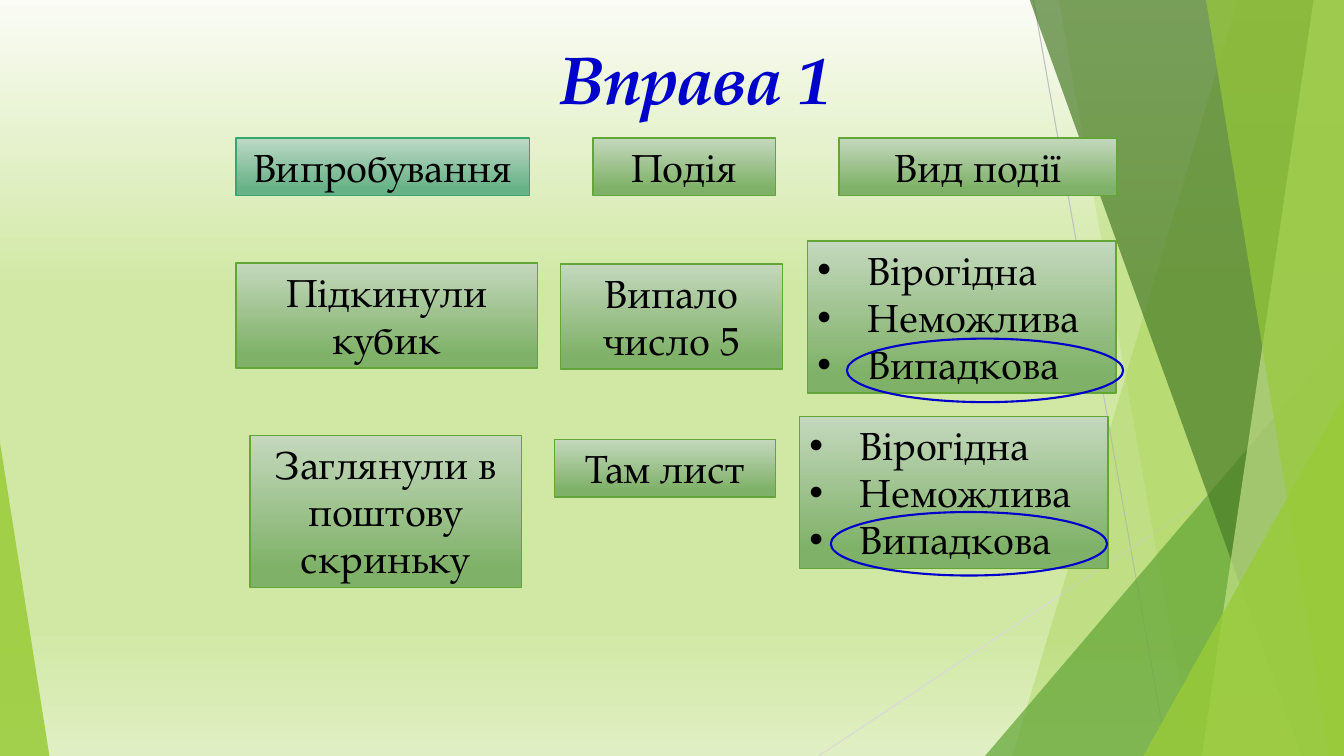
"""Build the "Вправа 1" slide about kinds of random events."""
from dataclasses import dataclass

from lxml import etree
from pptx import Presentation
from pptx import util as u
from pptx.dml import color
from pptx.enum import shapes, text
from pptx.oxml import ns

FONT = "TeX Gyre Pagella"
COLORS = {
    "lime": "99CB38", "leaf": "63A537", "forest": "4A7C29", "pale": "C2E088",
    "teal": "37A76F", "ink": "000000", "accent": "0000CC",
    "silver": "BFBFBF", "mist": "D9D9D9",
}
GRADIENTS = {
    "background": ((0, "FAFCF5"), (38, "D1E8A5"), (83, "D1E8A5"), (100, "E0EFC3")),
    "leaf": ((0, "C4D8BD"), (88, "7FB168")),
    "teal": ((0, "BDD9C7"), (88, "68B287")),
}
WIDTH, HEIGHT, TOP = 13.33, 7.5, -0.01


@dataclass
class Ray:
    start: tuple[float, float]
    end: tuple[float, float]
    tint: str


@dataclass
class Band:
    top_left: float
    bottom_left: float
    tint: str
    alpha: int


@dataclass
class Corner:
    left: float
    top: float
    width: float
    apex: int
    tint: str
    alpha: int


@dataclass
class Card:
    left: float
    top: float
    width: float
    height: float
    lines: tuple[str, ...]
    tint: str = "leaf"


RAYS = (
    Ray((10.25, 0), (11.58, HEIGHT), "silver"),
    Ray((WIDTH, 4.03), (8.12, HEIGHT), "mist"),
)
FACETS = (
    Band(12.28, 10.04, "lime", 30),
    Band(10.5, 11.83, "lime", 20),
    Corner(9.77, 3.33, 3.56, 1, "leaf", 72),
    Band(10.21, 12.91, "forest", 70),
    Band(13.03, 11.92, "pale", 70),
    Band(11.96, 13.18, "lime", 65),
    Corner(11.34, 3.93, 1.99, 1, "lime", 80),
    Corner(0, 4.39, 0.49, 0, "lime", 85),
)
KINDS = ("Вірогідна", "Неможлива", "Випадкова")
CARDS = (
    Card(2.34, 1.37, 2.91, 0.57, ("Випробування",), "teal"),
    Card(5.88, 1.37, 1.81, 0.57, ("Подія",)),
    Card(8.32, 1.37, 2.76, 0.57, ("Вид події",)),
    Card(2.34, 2.61, 2.99, 1.04, ("Підкинули кубик",)),
    Card(5.56, 2.62, 2.2, 1.04, ("Випало число 5",)),
    Card(8.01, 2.39, 3.06, 1.51, KINDS),
    Card(2.48, 4.32, 2.69, 1.51, ("Заглянули в поштову скриньку",)),
    Card(5.5, 4.36, 2.19, 0.57, ("Там лист",)),
    Card(7.93, 4.13, 3.06, 1.51, KINDS),
)
ANSWERS = ((8.4, 3.36), (8.24, 5.08))


def rgb(name: str) -> color.RGBColor:
    return color.RGBColor.from_string(COLORS[name])


def inches(*lengths: float) -> list[u.Length]:
    return [u.Inches(length) for length in lengths]


def add_element(parent, tag: str, **attributes: str):
    return etree.SubElement(parent, ns.qn(tag), attributes)


def fill_gradient(fill, element, name: str) -> None:
    fill.gradient()
    fill.gradient_angle = 270
    stops = element.find(".//" + ns.qn("a:gsLst"))
    for stop in list(stops):
        stops.remove(stop)
    for percent, value in GRADIENTS[name]:
        stop = add_element(stops, "a:gs", pos=str(percent * 1000))
        add_element(stop, "a:srgbClr", val=value)


def draw_ray(slide, ray: Ray) -> None:
    connector = slide.shapes.add_connector(
        shapes.MSO_CONNECTOR.STRAIGHT, *inches(*ray.start, *ray.end))
    connector.line.color.rgb = rgb(ray.tint)
    connector.line.width = u.Pt(0.75)
    add_element(connector.element.spPr, "a:effectLst")


def draw_facet(slide, facet: Band | Corner) -> None:
    if isinstance(facet, Band):
        start, *others = [inches(*point) for point in (
            (facet.top_left, TOP), (WIDTH, TOP), (WIDTH, HEIGHT),
            (facet.bottom_left, HEIGHT))]
        builder = slide.shapes.build_freeform(*start)
        builder.add_line_segments(others, close=True)
        shape = builder.convert_to_shape()
    else:
        shape = slide.shapes.add_shape(
            shapes.MSO_SHAPE.ISOSCELES_TRIANGLE,
            *inches(facet.left, facet.top, facet.width, HEIGHT - facet.top))
        shape.adjustments[0] = facet.apex
    shape.shadow.inherit = False
    shape.line.fill.background()
    shape.fill.solid()
    shape.fill.fore_color.rgb = rgb(facet.tint)
    tint = shape.element.spPr.find(".//" + ns.qn("a:srgbClr"))
    add_element(tint, "a:alpha", val=str(facet.alpha * 1000))


def write_text(shape, lines: tuple[str, ...], size: int, tint: str,
               emphasis: bool = False) -> None:
    frame = shape.text_frame
    frame.text = "\n".join(lines)
    frame.word_wrap = True
    frame.auto_size = text.MSO_AUTO_SIZE.SHAPE_TO_FIT_TEXT
    frame.vertical_anchor = text.MSO_ANCHOR.TOP
    for paragraph in frame.paragraphs:
        bulleted = len(lines) > 1
        paragraph.alignment = text.PP_ALIGN.LEFT if bulleted else text.PP_ALIGN.CENTER
        if bulleted:
            properties = paragraph._p.get_or_add_pPr()
            indent = u.Inches(0.5)
            properties.set("marL", str(indent))
            properties.set("indent", str(-indent))
            add_element(properties, "a:buFont", typeface="Arial")
            add_element(properties, "a:buChar", char="•")
        for run in paragraph.runs:
            run.font.name = FONT
            run.font.size = u.Pt(size)
            run.font.color.rgb = rgb(tint)
            run.font.bold = run.font.italic = emphasis


def draw_card(slide, card: Card) -> None:
    shape = slide.shapes.add_shape(
        shapes.MSO_SHAPE.RECTANGLE,
        *inches(card.left, card.top, card.width, card.height))
    shape.shadow.inherit = False
    fill_gradient(shape.fill, shape.element, card.tint)
    shape.line.color.rgb = rgb(card.tint)
    shape.line.width = u.Pt(1)
    write_text(shape, card.lines, 28, "ink")


def draw_answer(slide, left: float, top: float) -> None:
    shape = slide.shapes.add_shape(
        shapes.MSO_SHAPE.OVAL, *inches(left, top, 2.74, 0.63))
    shape.shadow.inherit = False
    shape.fill.background()
    shape.line.color.rgb = rgb("accent")
    shape.line.width = u.Pt(1.5)


def main() -> None:
    presentation = Presentation()
    presentation.slide_width, presentation.slide_height = inches(WIDTH, HEIGHT)
    slide = presentation.slides.add_slide(presentation.slide_layouts[6])
    fill_gradient(slide.background.fill, slide.element, "background")
    for ray in RAYS:
        draw_ray(slide, ray)
    for facet in FACETS:
        draw_facet(slide, facet)
    for card in CARDS:
        draw_card(slide, card)
    title = slide.shapes.add_textbox(*inches(5.33, 0.32, 3.14, 0.91))
    write_text(title, ("Вправа 1",), 48, "accent", emphasis=True)
    for left, top in ANSWERS:
        draw_answer(slide, left, top)
    presentation.save("out.pptx")


if __name__ == "__main__":
    main()
